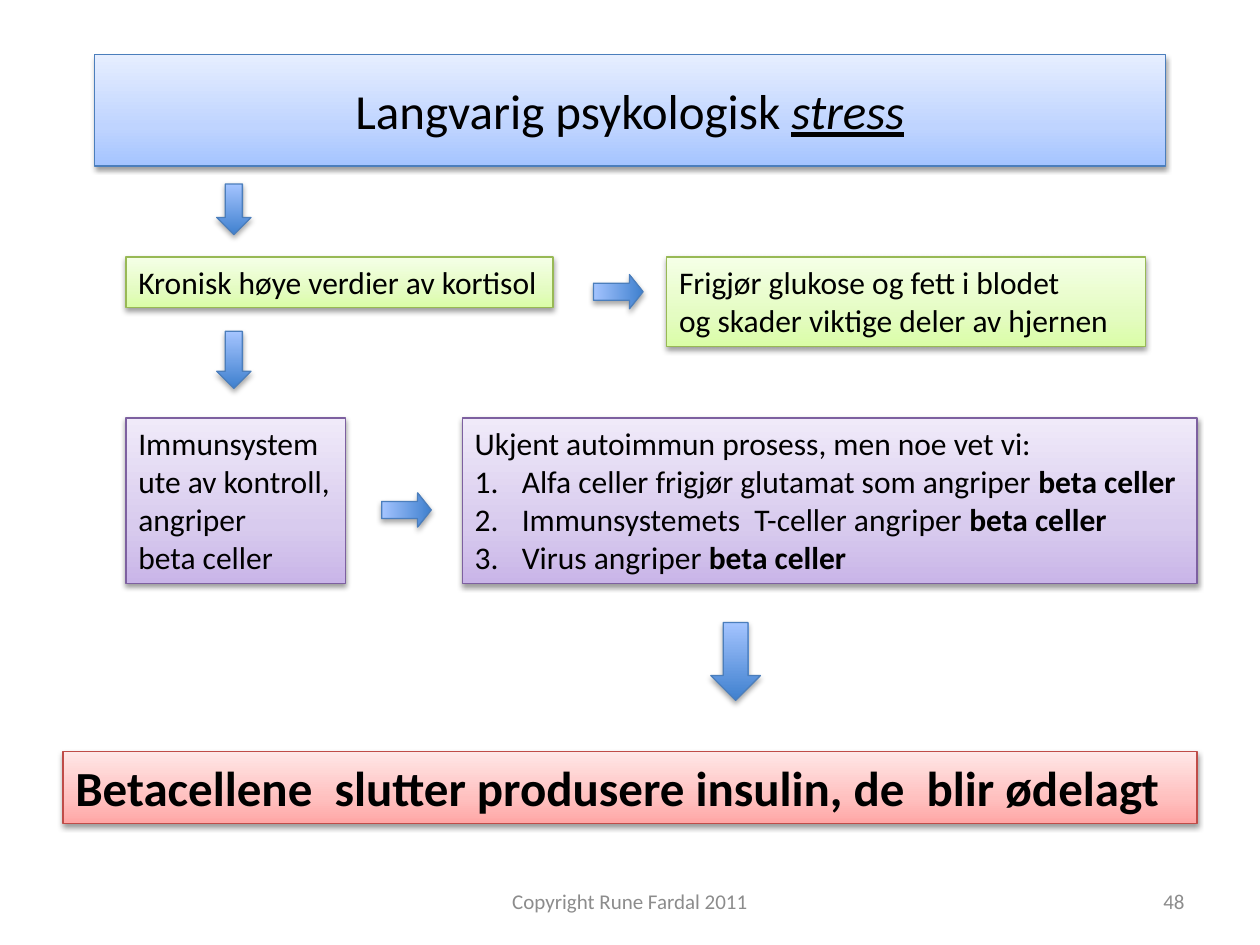
from lxml import etree
from pptx import Presentation
from pptx.dml.color import RGBColor
from pptx.enum.shapes import MSO_SHAPE
from pptx.enum.text import MSO_ANCHOR, MSO_AUTO_SIZE, PP_ALIGN
from pptx.oxml.ns import qn
from pptx.util import Cm, Pt

RECTANGLE, DOWN_ARROW = MSO_SHAPE.RECTANGLE, MSO_SHAPE.DOWN_ARROW
TOP, MIDDLE = MSO_ANCHOR.TOP, MSO_ANCHOR.MIDDLE
LEFT, CENTER, RIGHT = PP_ALIGN.LEFT, PP_ALIGN.CENTER, PP_ALIGN.RIGHT
FIT_SHAPE, NO_FIT = MSO_AUTO_SIZE.SHAPE_TO_FIT_TEXT, MSO_AUTO_SIZE.NONE

FONT = "Calibri"
BLACK = RGBColor(0x00, 0x00, 0x00)
GRAY = RGBColor(0x8C, 0x8C, 0x8C)
BLUE_LINE = RGBColor(0x4B, 0x7E, 0xBC)
GREEN_LINE = RGBColor(0x98, 0xB9, 0x55)
PURPLE_LINE = RGBColor(0x7D, 0x60, 0xA0)
RED_LINE = RGBColor(0xBF, 0x4C, 0x48)
PALE_BLUE = RGBColor(0xA4, 0xC4, 0xFF)

# Each style: line colour and gradient stops from bottom to top
BLUE = (BLUE_LINE, {0: PALE_BLUE, 35: RGBColor(0xBF, 0xD4, 0xFF),
                    100: RGBColor(0xE6, 0xEE, 0xFF)})
GREEN = (GREEN_LINE, {0: RGBColor(0xDA, 0xFD, 0xA7), 35: RGBColor(0xE4, 0xFC, 0xC2),
                      100: RGBColor(0xF5, 0xFF, 0xE7)})
PURPLE = (PURPLE_LINE, {0: RGBColor(0xC9, 0xB5, 0xE8), 35: RGBColor(0xD8, 0xCB, 0xEE),
                        100: RGBColor(0xF0, 0xEA, 0xF9)})
RED = (RED_LINE, {0: RGBColor(0xFF, 0xA6, 0xA5), 35: RGBColor(0xFF, 0xC0, 0xBF),
                  100: RGBColor(0xFF, 0xE7, 0xE7)})
ARROW = (BLUE_LINE, {0: RGBColor(0x3F, 0x80, 0xCE), 100: PALE_BLUE})

BOLD = {"bold": True}
ARROW_WIDTH = 0.69


def add_xml(parent, tag, **attributes):
    return etree.SubElement(parent, qn(tag), {k: str(v) for k, v in attributes.items()})


def add_styled_shape(slide, kind, box, style, shadow_distance, shadow_opacity):
    """Add a preset shape with upward gradient, thin line and soft shadow."""
    shape = slide.shapes.add_shape(kind, *(Cm(length) for length in box))
    line_color, stops = style
    properties = shape._element.spPr

    gradient = etree.Element(qn("a:gradFill"), rotWithShape="1")
    stop_list = add_xml(gradient, "a:gsLst")
    for position, color in stops.items():
        stop = add_xml(stop_list, "a:gs", pos=position * 1000)
        add_xml(stop, "a:srgbClr", val=color)
    add_xml(gradient, "a:lin", ang=270 * 60000, scaled=0)
    properties.find(qn("a:prstGeom")).addnext(gradient)

    shape.line.color.rgb = line_color
    shape.line.width = Pt(0.75)

    shape.shadow.inherit = False
    shadow = add_xml(properties.find(qn("a:effectLst")), "a:outerShdw", blurRad=40000,
                     dist=shadow_distance, dir=90 * 60000, rotWithShape=0)
    color = add_xml(shadow, "a:srgbClr", val=BLACK)
    add_xml(color, "a:alpha", val=shadow_opacity * 1000)
    return shape


def write_text(shape, paragraphs, size, color=BLACK, align=LEFT, numbered_from=None, **frame_format):
    """Write paragraphs, each a list of (text, font format) runs."""
    frame = shape.text_frame
    settings = {"word_wrap": True, "vertical_anchor": TOP, "auto_size": NO_FIT} | frame_format
    for name, value in settings.items():
        setattr(frame, name, value)
    for index, runs in enumerate(paragraphs):
        paragraph = frame.paragraphs[0] if index == 0 else frame.add_paragraph()
        paragraph.alignment = align
        if numbered_from is not None and index >= numbered_from:
            properties = paragraph._p.get_or_add_pPr()
            properties.set("marL", str(Cm(0.95)))
            properties.set("indent", str(-Cm(0.95)))
            add_xml(properties, "a:buFont", typeface="+mj-lt")
            add_xml(properties, "a:buAutoNum", type="arabicPeriod")
        for text, run_format in runs:
            run = paragraph.add_run()
            run.text = text
            run.font.color.rgb = color
            for name, value in ({"name": FONT, "size": Pt(size)} | run_format).items():
                setattr(run.font, name, value)


def add_card(slide, box, style, paragraphs, size=18, **text_format):
    shape = add_styled_shape(slide, RECTANGLE, box, style, 20000, 38)
    write_text(shape, paragraphs, size, **({"auto_size": FIT_SHAPE} | text_format))


def add_arrow(slide, box, points_right=False):
    shape = add_styled_shape(slide, DOWN_ARROW, box, ARROW, 23000, 35)
    if points_right:
        shape.rotation = 270
        shape.adjustments[1] = 0.4


def add_title(slide, left, top, width, height):
    runs = [("Langvarig psykologisk ", {}), ("stress", {"italic": True, "underline": True})]
    add_card(slide, (left, top, width, height), BLUE, [runs], size=28, align=CENTER,
             vertical_anchor=MIDDLE, auto_size=NO_FIT)


def add_cortisol_row(slide, left, top):
    add_arrow(slide, (left + 1.83, top - 1.47, ARROW_WIDTH, 1.02))
    add_card(slide, (left, top, 8.61, 1.02), GREEN,
             [[("Kronisk høye verdier av kortisol", {})]], word_wrap=False)
    add_arrow(slide, (left + 9.58, top + 0.2, ARROW_WIDTH, 1), points_right=True)
    effects = ["Frigjør glukose og fett i blodet", "og skader viktige deler av hjernen"]
    add_card(slide, (left + 10.9, top, 9.65, 1.8), GREEN, [[(text, {})] for text in effects])


def add_immune_row(slide, left, top, height):
    add_arrow(slide, (left + 1.83, top - 1.75, ARROW_WIDTH, 1.15))
    lines = ["Immunsystem", "ute av kontroll,", "angriper", "beta celler"]
    add_card(slide, (left, top, 4.42, height), PURPLE, [[(text, {})] for text in lines],
             word_wrap=False)
    add_arrow(slide, (left + 5.31, top + 1.35, ARROW_WIDTH, 1), points_right=True)
    causes = ["Alfa celler frigjør glutamat som angriper ",
              "Immunsystemets  T-celler angriper ", "Virus angriper "]
    process = [[("Ukjent autoimmun prosess, men noe vet vi:", {})]]
    process += [[(cause, {}), ("beta celler", BOLD)] for cause in causes]
    add_card(slide, (left + 6.78, top, 14.81, height), PURPLE, process, numbered_from=1)


def add_conclusion(slide, left, top, width, height):
    add_arrow(slide, (left + 13.06, top - 2.6, 1, 1.57))
    text = "Betacellene  slutter produsere insulin, de  blir ødelagt"
    add_card(slide, (left, top, width, height), RED, [[(text, BOLD)]], size=28)


def add_footer(slide, top, height):
    for text, left, width, align in (("Copyright Rune Fardal 2011", 8.68, 8.04, CENTER),
                                     ("48", 18.2, 5.93, RIGHT)):
        shape = slide.shapes.add_textbox(Cm(left), Cm(top), Cm(width), Cm(height))
        write_text(shape, [[(text, {})]], 12, GRAY, align, vertical_anchor=MIDDLE)


def main():
    presentation = Presentation()
    presentation.slide_width, presentation.slide_height = Cm(25.4), Cm(19.05)
    slide = presentation.slides.add_slide(presentation.slide_layouts[6])

    add_title(slide, 1.9, 1.1, 21.6, 2.25)
    add_cortisol_row(slide, 2.54, 5.18)
    add_immune_row(slide, 2.54, 8.43, 3.33)
    add_conclusion(slide, 1.27, 15.15, 22.86, 1.45)
    add_footer(slide, 17.65, 1.02)
    presentation.save("out.pptx")


if __name__ == "__main__":
    main()
